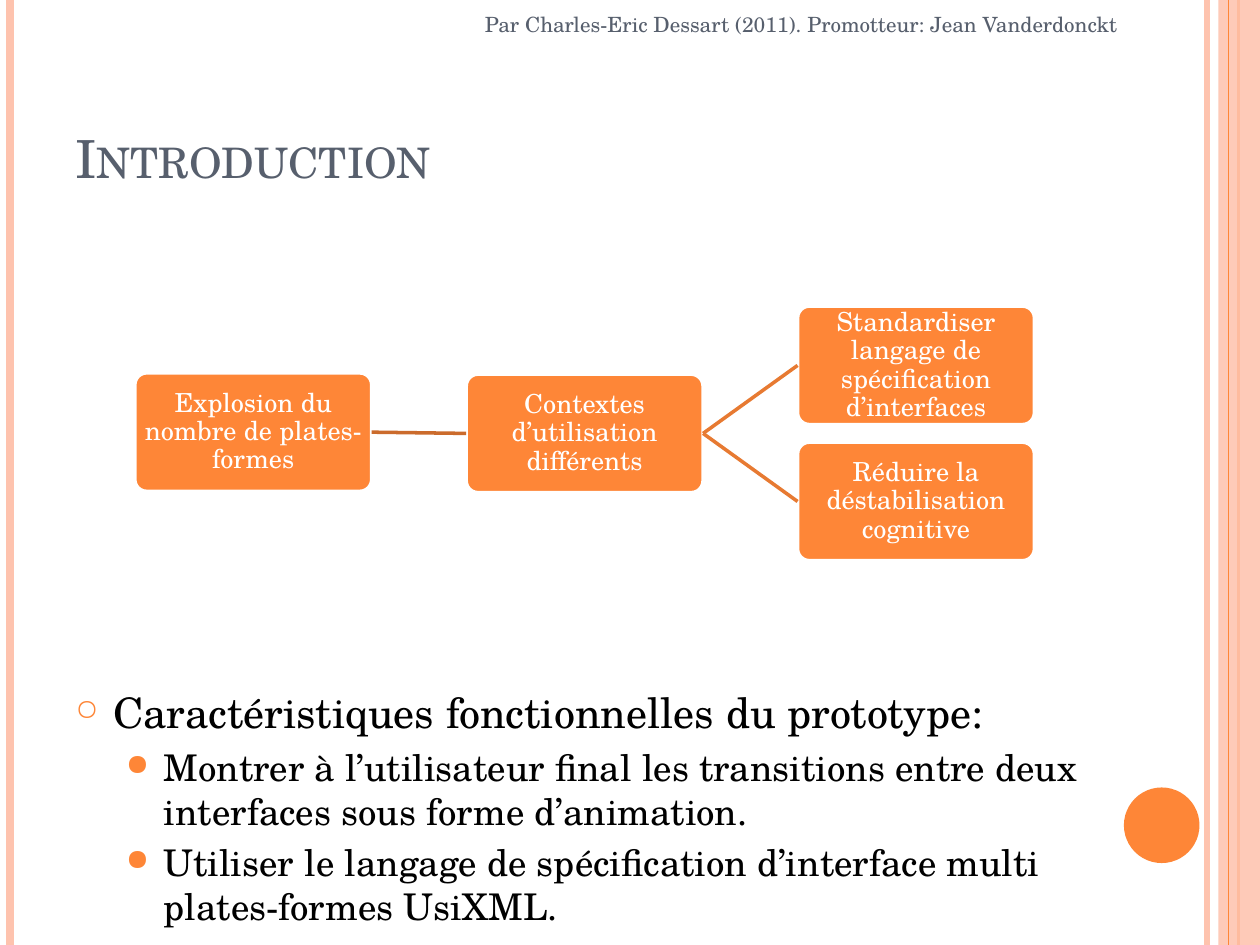
import pptx
import pptx.util
import pptx.dml.color
import pptx.enum.shapes
import pptx.enum.text
import pptx.oxml.ns
import lxml.etree

Inches = pptx.util.Inches
Pt = pptx.util.Pt
RGBColor = pptx.dml.color.RGBColor
MSO_SHAPE = pptx.enum.shapes.MSO_SHAPE
MSO_ANCHOR = pptx.enum.text.MSO_ANCHOR
PP_ALIGN = pptx.enum.text.PP_ALIGN
qn = pptx.oxml.ns.qn

FONT = "TeX Gyre Schola"
COLORS = {
    "orange": "FE8637",
    "peach": "FEC3AE",
    "dark_link": "CB6B2C",
    "light_link": "E77A32",
    "slate": "575F6D",
    "white": "FFFFFF",
    "black": "000000",
}

presentation = pptx.Presentation()
presentation.slide_width = Inches(10)
presentation.slide_height = Inches(7.5)
slide = presentation.slides.add_slide(presentation.slide_layouts[6])


def add_line(start, end, color, width):
    line = slide.shapes.add_connector(
        pptx.enum.shapes.MSO_CONNECTOR.STRAIGHT,
        Inches(start[0]), Inches(start[1]), Inches(end[0]), Inches(end[1]))
    line.line.color.rgb = RGBColor.from_string(COLORS[color])
    line.line.width = Pt(width)
    lxml.etree.SubElement(line._element.spPr, qn("a:effectLst"))
    return line


def add_run(paragraph, text, size, color):
    run = paragraph.add_run()
    run.text = text
    run.font.name = FONT
    run.font.size = Pt(size)
    run.font.color.rgb = RGBColor.from_string(COLORS[color])
    return run


# Vertical stripes, side band and circle
for x, color, width in [(9.58, "peach", 3), (0.08, "peach", 4.5), (9.83, "orange", 1.5)]:
    stripe = add_line((x, 0), (x, 7.5), color, width)

decorations = [
    (MSO_SHAPE.RECTANGLE, 9.67, 0, 0.33, 7.5, "peach", 87),
    (MSO_SHAPE.OVAL, 8.92, 6.25, 0.6, 0.6, "orange", 100),
]
for kind, left, top, width, height, color, opacity in decorations:
    shape = slide.shapes.add_shape(kind, Inches(left), Inches(top), Inches(width), Inches(height))
    shape.shadow.inherit = False
    shape.fill.solid()
    shape.fill.fore_color.rgb = RGBColor.from_string(COLORS[color])
    shape.line.fill.background()
    if opacity < 100:
        color_element = shape._element.spPr.find(".//" + qn("a:srgbClr"))
        lxml.etree.SubElement(color_element, qn("a:alpha"), val=str(opacity * 1000))
add_line((9.75, 0), (9.75, 7.5), "orange", 0.75)

# Title and credit line
headings = [
    ("Introduction", 0.5, 0.3, 8.17, 1.25, 30, MSO_ANCHOR.BOTTOM),
    ("Par Charles-Eric Dessart (2011). Promotteur: Jean Vanderdonckt",
     3.75, 0, 6.05, 0.38, 12, MSO_ANCHOR.MIDDLE),
]
for text, left, top, width, height, size, anchor in headings:
    box = slide.shapes.add_textbox(Inches(left), Inches(top), Inches(width), Inches(height))
    box.text_frame.word_wrap = True
    box.text_frame.vertical_anchor = anchor
    run = add_run(box.text_frame.paragraphs[0], text, size, "slate")
    if text == "Introduction":
        run.font._element.set("cap", "small")

# Diagram boxes
steps = [
    ("Explosion du nombre de plates-formes", 1.07, 2.96),
    ("Contextes d’utilisation différents", 3.7, 2.97),
    ("Standardiser langage de spécification d’interfaces", 6.33, 2.43),
    ("Réduire la déstabilisation cognitive", 6.33, 3.51),
]
step_shapes = []
for text, left, top in steps:
    shape = slide.shapes.add_shape(
        MSO_SHAPE.ROUNDED_RECTANGLE, Inches(left), Inches(top), Inches(1.88), Inches(0.94))
    shape.adjustments[0] = 0.1
    shape.shadow.inherit = False
    shape.fill.solid()
    shape.fill.fore_color.rgb = RGBColor.from_string(COLORS["orange"])
    shape.line.color.rgb = RGBColor.from_string(COLORS["white"])
    shape.line.width = Pt(2)
    frame = shape.text_frame
    frame.word_wrap = True
    frame.vertical_anchor = MSO_ANCHOR.MIDDLE
    frame.margin_left = frame.margin_right = Inches(0.01)
    frame.margin_top = frame.margin_bottom = Inches(0.01)
    paragraph = frame.paragraphs[0]
    paragraph.alignment = PP_ALIGN.CENTER
    paragraph.line_spacing = 0.9
    add_run(paragraph, text, 15, "white")
    step_shapes.append(shape)

# Links from right side to left side
for source, target, color in [(0, 1, "dark_link"), (1, 2, "light_link"), (1, 3, "light_link")]:
    link = add_line((0, 0), (1, 1), color, 2)
    link.begin_connect(step_shapes[source], 3)
    link.end_connect(step_shapes[target], 1)

# Bulleted list
bullets = [
    ("Caractéristiques fonctionnelles du prototype:", 0, 24, 6),
    ("Montrer à l’utilisateur final les transitions entre deux interfaces sous forme d’animation.",
     1, 21, 4.2),
    ("Utiliser le langage de spécification d’interface multi plates-formes UsiXML.", 1, 21, 4.2),
]
bullet_styles = [("○", 70, 0.3), ("●", 80, 0.7)]
box = slide.shapes.add_textbox(Inches(0.5), Inches(5.4), Inches(8.28), Inches(2.02))
frame = box.text_frame
frame.word_wrap = True
for index, (text, level, size, space) in enumerate(bullets):
    paragraph = frame.paragraphs[0] if index == 0 else frame.add_paragraph()
    paragraph.level = level
    paragraph.space_before = Pt(space)
    add_run(paragraph, text, size, "black")
    symbol, percent, indent = bullet_styles[level]
    properties = paragraph._p.get_or_add_pPr()
    properties.set("marL", str(Inches(indent)))
    properties.set("indent", str(Inches(-0.3)))
    bullet_color = lxml.etree.SubElement(properties, qn("a:buClr"))
    lxml.etree.SubElement(bullet_color, qn("a:srgbClr"), val=COLORS["orange"])
    lxml.etree.SubElement(properties, qn("a:buSzPct"), val=str(percent * 1000))
    lxml.etree.SubElement(properties, qn("a:buChar"), char=symbol)

presentation.save("out.pptx")
